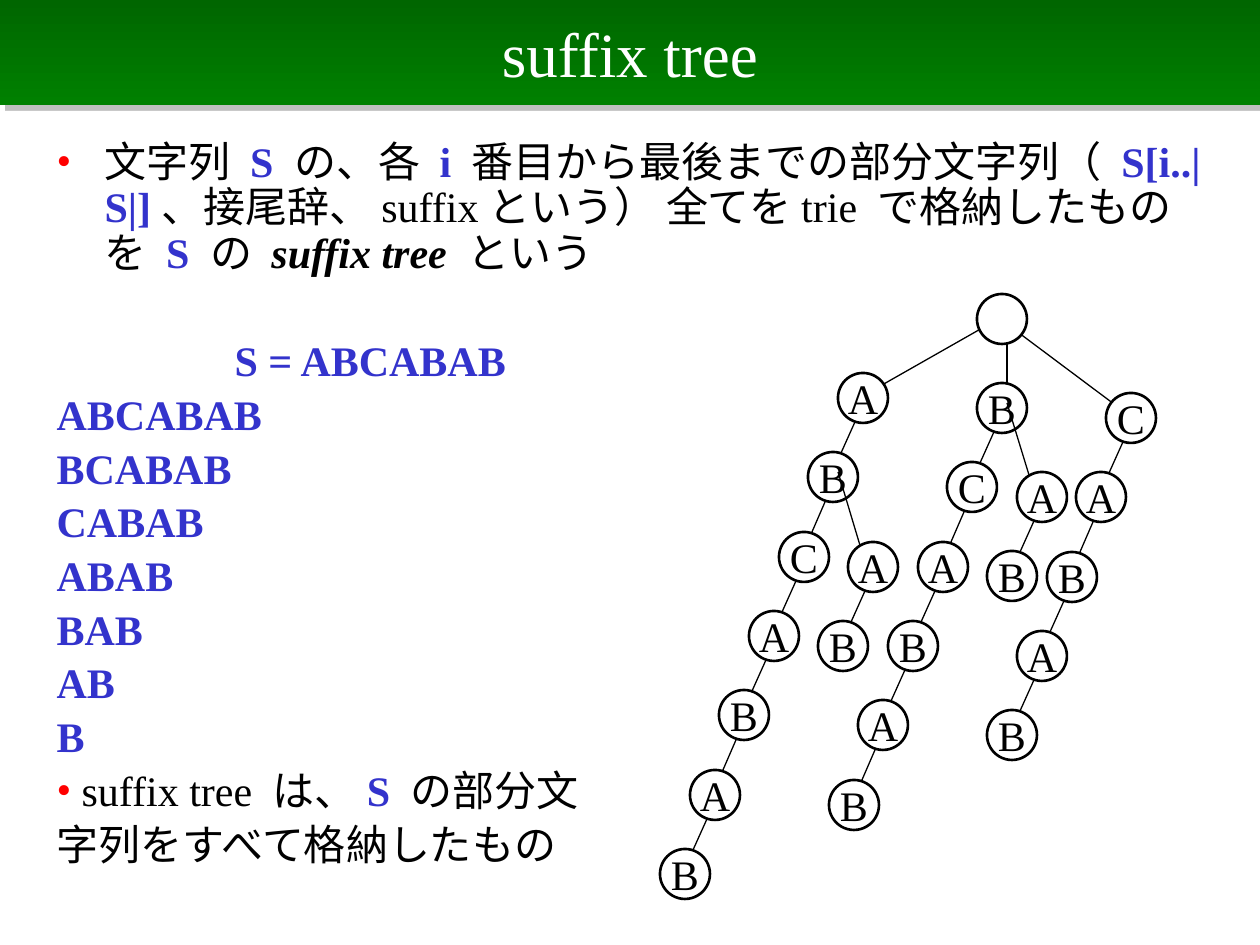
import lxml.etree
import pptx
import pptx.dml.color
import pptx.enum.shapes
import pptx.enum.text
import pptx.oxml
import pptx.oxml.ns
import pptx.util

PX = 914400 / 126
FONT = "Times New Roman"
BLACK = pptx.dml.color.RGBColor(0x00, 0x00, 0x00)
WHITE = pptx.dml.color.RGBColor(0xFF, 0xFF, 0xFF)
RED = pptx.dml.color.RGBColor(0xFF, 0x00, 0x00)
BLUE = pptx.dml.color.RGBColor(0x33, 0x33, 0xCC)
DARK_GREEN = pptx.dml.color.RGBColor(0x00, 0x66, 0x00)
GREEN = pptx.dml.color.RGBColor(0x00, 0x80, 0x00)
RADIUS = 25
ROOT = (1002, 319)


def px(*lengths):
    return [round(length * PX) for length in lengths]


def add_run(paragraph, text, size, color, bold=False, italic=False):
    run = paragraph.add_run()
    run.text = text
    run.font.name = FONT
    run.font.size = pptx.util.Pt(size)
    run.font.color.rgb = color
    run.font.bold = bold
    run.font.italic = italic


presentation = pptx.Presentation()
presentation.slide_width, presentation.slide_height = px(1260, 945)
slide = presentation.slides.add_slide(presentation.slide_layouts[1])

title = slide.shapes.title
title.left, title.top, title.width, title.height = px(0, 0, 1260, 105)
title.fill.gradient()
title.fill.gradient_angle = 270
for stop, color, position in zip(title.fill.gradient_stops, (DARK_GREEN, GREEN), (0, 1)):
    stop.color.rgb = color
    stop.position = position
title.text_frame.vertical_anchor = pptx.enum.text.MSO_ANCHOR.MIDDLE
title.text_frame.auto_size = pptx.enum.text.MSO_AUTO_SIZE.NONE
heading = title.text_frame.paragraphs[0]
heading.alignment = pptx.enum.text.PP_ALIGN.CENTER
add_run(heading, "suffix tree", 36, WHITE)
title._element.spPr.append(pptx.oxml.parse_xml(
    f'<a:effectLst {pptx.oxml.ns.nsdecls("a")}>'
    '<a:outerShdw blurRad="0" dist="53340" dir="2700000" algn="ctr" rotWithShape="0">'
    '<a:srgbClr val="808080"><a:alpha val="50000"/></a:srgbClr>'
    '</a:outerShdw></a:effectLst>'))

definition = [
    ("文字列 ", BLACK), ("S ", BLUE, True), ("の、各 ", BLACK), ("i ", BLUE, True),
    ("番目から最後までの部分文字列（ ", BLACK), ("S[i..|S|]", BLUE, True),
    ("、接尾辞、suffixという） 全てをtrie で格納したものを ", BLACK),
    ("S ", BLUE, True), ("の ", BLACK), ("suffix tree ", BLACK, True, True), ("という", BLACK),
]
word = "ABCABAB"
summary = [("suffix tree は、", BLACK), ("S ", BLUE, True), ("の部分文", BLACK)]
paragraphs = [(definition, 48, -48, True), ([(f"S = {word}", BLUE, True)], 178, 0, False)]
paragraphs += [([(word[start:], BLUE, True)], 48, -48, False) for start in range(len(word))]
paragraphs += [(summary, 25, -25, True), ([("字列をすべて格納したもの", BLACK)], 48, -48, False)]

body = slide.placeholders[1]
body.left, body.top, body.width, body.height = px(44, 135, 1171, 297)
body.text_frame.word_wrap = True
body.text_frame.auto_size = pptx.enum.text.MSO_AUTO_SIZE.NONE
for index, (runs, margin, indent, bulleted) in enumerate(paragraphs):
    paragraph = body.text_frame.paragraphs[0] if index == 0 else body.text_frame.add_paragraph()
    paragraph.line_spacing = 0.9
    if index == 1:
        paragraph.space_before = pptx.util.Pt(36)
    for run in runs:
        add_run(paragraph, run[0], 24, *run[1:])
    properties = paragraph._p.get_or_add_pPr()
    properties.set("marL", str(px(margin)[0]))
    properties.set("indent", str(px(indent)[0]))
    if bulleted:
        bullet_color = lxml.etree.SubElement(properties, pptx.oxml.ns.qn("a:buClr"))
        lxml.etree.SubElement(bullet_color, pptx.oxml.ns.qn("a:srgbClr"), val=str(RED))
        lxml.etree.SubElement(properties, pptx.oxml.ns.qn("a:buFont"), typeface=FONT)
        lxml.etree.SubElement(properties, pptx.oxml.ns.qn("a:buChar"), char="•")
    else:
        lxml.etree.SubElement(properties, pptx.oxml.ns.qn("a:buNone"))

branches = [
    ("ABCABAB", (863, 398), (1007, 314, 868, 393)),
    ("BCABAB", (1002, 408), (1007, 324, 1007, 393)),
    ("CABAB", (1131, 418), (1007, 324, 1126, 413)),
    ("AB", (873, 567), (838, 472, 868, 572)),
    ("AB", (1042, 497), (1007, 403, 1037, 501)),
]
for letters, (first_x, first_y), entry in branches + [(" ", ROOT, None)]:
    centers = [(first_x - round(depth * 89 / 3), first_y + round(depth * 238 / 3))
               for depth in range(len(letters))]
    edges = [entry] if entry else []
    edges += [(x + 5, y - 5, next_x - 5, next_y + 5)
              for (x, y), (next_x, next_y) in zip(centers, centers[1:])]
    for edge in edges:
        connector = slide.shapes.add_connector(pptx.enum.shapes.MSO_CONNECTOR.STRAIGHT, *px(*edge))
        connector.line.color.rgb = BLACK
        connector.line.width = pptx.util.Pt(0.75)
        lxml.etree.SubElement(connector._element.spPr, pptx.oxml.ns.qn("a:effectLst"))
    for letter, (x, y) in zip(letters, centers):
        node = slide.shapes.add_shape(
            pptx.enum.shapes.MSO_SHAPE.OVAL,
            *px(x - RADIUS, y - RADIUS, 2 * RADIUS, 2 * RADIUS))
        node.shadow.inherit = False
        node.fill.solid()
        node.fill.fore_color.rgb = WHITE
        node.line.color.rgb = BLACK
        node.line.width = pptx.util.Pt(1.5)
        if letter.strip():
            node.text_frame.word_wrap = False
            node.text_frame.vertical_anchor = pptx.enum.text.MSO_ANCHOR.MIDDLE
            label = node.text_frame.paragraphs[0]
            label.alignment = pptx.enum.text.PP_ALIGN.CENTER
            add_run(label, letter, 24, BLACK)

presentation.save("out.pptx")
